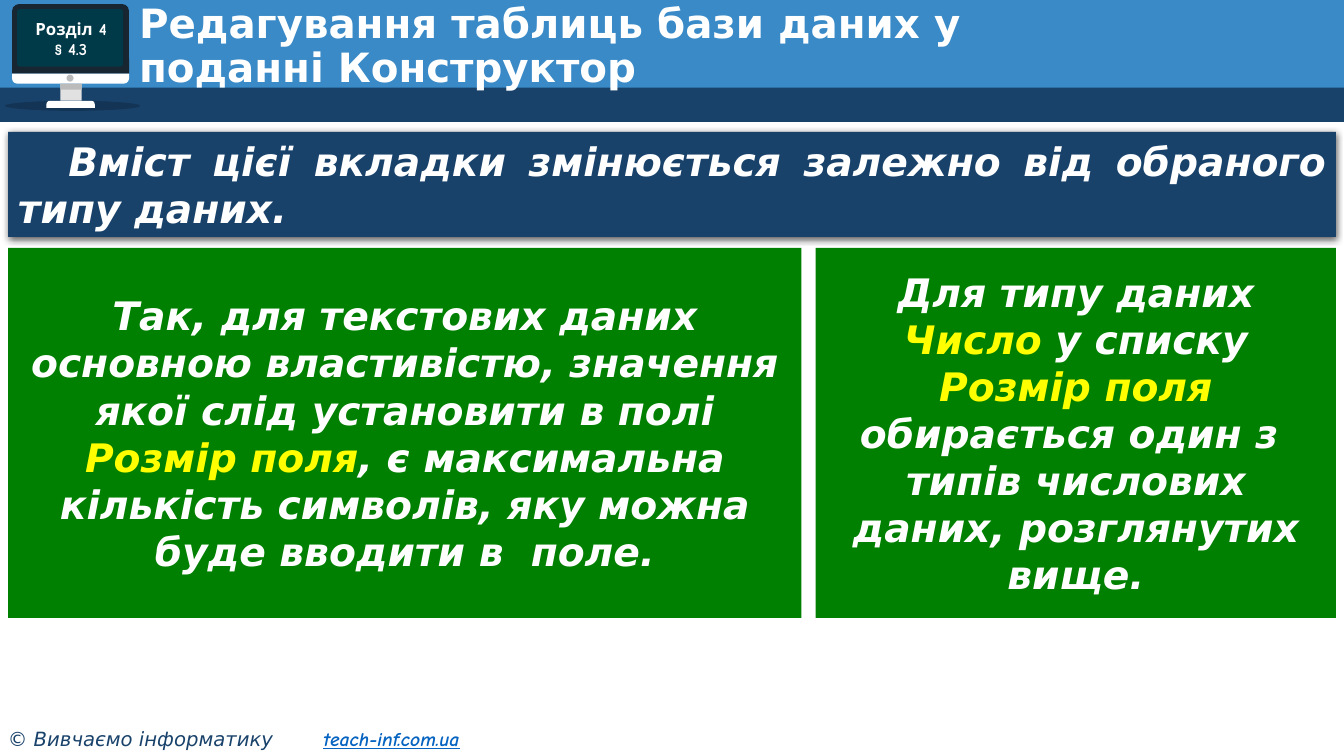
from lxml import etree
from pptx import Presentation
from pptx.dml.color import RGBColor
from pptx.enum.shapes import MSO_SHAPE
from pptx.enum.text import MSO_ANCHOR, MSO_AUTO_SIZE, PP_ALIGN
from pptx.oxml.ns import qn
from pptx.util import Inches, Pt

RECT, OVAL = MSO_SHAPE.RECTANGLE, MSO_SHAPE.OVAL
ROUNDED, ROUND_TOP = MSO_SHAPE.ROUNDED_RECTANGLE, MSO_SHAPE.ROUND_2_SAME_RECTANGLE
LEFT, CENTER, JUSTIFY = PP_ALIGN.LEFT, PP_ALIGN.CENTER, PP_ALIGN.JUSTIFY
TOP, MIDDLE = MSO_ANCHOR.TOP, MSO_ANCHOR.MIDDLE
NO_AUTOFIT = MSO_AUTO_SIZE.NONE

SANS, COMIC = "DejaVu Sans", "Comic Neue"
COLORS = {
    "sky": "398AC7", "navy": "19426B", "green": "008000", "yellow": "FFFF00",
    "white": "FFFFFF", "black": "000000", "link": "0563C1", "case": "182632",
    "screen": "003948", "stand": "E1E1E1", "grey": "BBBBBB",
}
WIDTH, HEIGHT = 13.33, 7.5
MARGIN = 0.08


def add_block(slide, kind, box, color, adjustments=()):
    block = slide.shapes.add_shape(kind, *map(Inches, box))
    block.shadow.inherit = False
    block.fill.solid()
    block.fill.fore_color.rgb = RGBColor.from_string(COLORS[color])
    block.line.fill.background()
    for index, value in enumerate(adjustments):
        block.adjustments[index] = value
    return block


def write(shape, paragraphs, *, size, color="white", font=SANS, bold=False, italic=False,
          align=LEFT, anchor=TOP, indent=0, tab=0, spacing=None):
    frame = shape.text_frame
    frame.word_wrap = True
    frame.auto_size = NO_AUTOFIT
    frame.vertical_anchor = anchor
    for index, pieces in enumerate(paragraphs):
        paragraph = frame.add_paragraph() if index else frame.paragraphs[0]
        paragraph.alignment = align
        paragraph.line_spacing = spacing
        properties = paragraph._p.get_or_add_pPr()
        if indent:
            properties.set("indent", str(Inches(indent)))
        if tab:
            stops = etree.SubElement(properties, qn("a:tabLst"))
            etree.SubElement(stops, qn("a:tab"), pos=str(Inches(tab)), algn="l")
        for text, changes in pieces:
            style = {"color": color, "font": font, "bold": bold, "italic": italic,
                     "underline": None, **changes}
            for number, line in enumerate(text.split("\n")):
                if number:
                    paragraph.add_line_break()
                run = paragraph.add_run()
                run.text = line
                run.font.size = Pt(size)
                run.font.name = style["font"]
                run.font.bold = style["bold"]
                run.font.italic = style["italic"]
                run.font.underline = style["underline"]
                run.font.color.rgb = RGBColor.from_string(COLORS[style["color"]])


def set_alpha(color_element, percent):
    etree.SubElement(color_element, qn("a:alpha"), val=str(percent * 1000))


def add_drop_shadow(block):
    effects = block._element.spPr.find(qn("a:effectLst"))
    shadow = etree.SubElement(effects, qn("a:outerShdw"), blurRad=str(Pt(4.5)),
                              dist=str(Pt(1.5)), dir="5400000", algn="ctr", rotWithShape="0")
    set_alpha(etree.SubElement(shadow, qn("a:srgbClr"), val=COLORS["black"]), 63)


def add_monitor(slide, left, top):
    def part(kind, x, y, width, height, color, adjustments=()):
        return add_block(slide, kind, (left + x, top + y, width, height), color, adjustments)

    floor = part(OVAL, 0, 0.96, 1.34, 0.1, "black")
    set_alpha(floor._element.spPr.find(qn("a:solidFill"))[0], 20)
    part(ROUND_TOP, 0.07, 0, 1.16, 0.69, "case", (0.1, 0))
    part(ROUND_TOP, 0.07, 0.69, 1.16, 0.1, "white", (0, 0.5))
    part(RECT, 0.55, 0.79, 0.21, 0.17, "stand")
    part(RECT, 0.55, 0.79, 0.21, 0.06, "grey")
    part(ROUND_TOP, 0.41, 0.96, 0.48, 0.07, "white", (0.5, 0))
    part(OVAL, 0.61, 0.7, 0.07, 0.07, "grey")
    part(ROUNDED, 0.12, 0.05, 1.05, 0.57, "screen", (0.04,))
    section = slide.shapes.add_textbox(*map(Inches, (left + 0.08, top + 0.05, 1.15, 0.59)))
    write(section, [[("Розділ 4", {})], [("§ 4.3", {})]], size=12, font=COMIC, bold=True,
          align=CENTER, anchor=MIDDLE)


def add_header(slide, left, top, width):
    add_block(slide, RECT, (left, top, width, 0.91), "sky")
    add_block(slide, RECT, (left, top + 0.87, width, 0.34), "navy")
    add_monitor(slide, left + 0.05, top + 0.04)
    title = slide.shapes.title
    title.left, title.top, title.width, title.height = map(
        Inches, (left + 1.28, top + 0.18, 11.72, 0.58))
    write(title, [[("Редагування таблиць бази даних у\nподанні Конструктор", {})]],
          size=28.8, bold=True, anchor=MIDDLE, spacing=0.9)
    slide.shapes._spTree.append(title._element)


def add_intro(slide, box):
    intro = add_block(slide, RECT, box, "navy")
    add_drop_shadow(intro)
    write(intro, [[("Вміст цієї вкладки змінюється залежно від обраного типу даних.", {})]],
          size=28, bold=True, italic=True, align=JUSTIFY, indent=0.5)


def add_card(slide, box, pieces):
    card = add_block(slide, RECT, box, "green")
    write(card, [pieces], size=28, bold=True, italic=True, align=CENTER, anchor=MIDDLE)


def add_footer(slide, box):
    footer = slide.shapes.add_textbox(*map(Inches, box))
    site = {"font": COMIC, "color": "link", "bold": True, "underline": True}
    write(footer, [[("© Вивчаємо інформатику\t", {}), ("teach-inf.com.ua", site)]],
          size=14, color="navy", italic=True, tab=3.13)


def main():
    presentation = Presentation()
    presentation.slide_width, presentation.slide_height = Inches(WIDTH), Inches(HEIGHT)
    slide = presentation.slides.add_slide(presentation.slide_layouts[5])
    key = {"color": "yellow"}
    content_width = WIDTH - 2 * MARGIN
    text_width, gap = 7.87, 0.14
    number_left = MARGIN + text_width + gap

    add_header(slide, 0, 0, WIDTH)
    add_footer(slide, (-0.02, 7.16, 5.23, 0.34))
    add_intro(slide, (MARGIN, 1.31, content_width, 1.04))
    add_card(slide, (MARGIN, 2.46, text_width, 3.67), [
        ("Так, для текстових даних основною властивістю, значення якої слід "
         "установити в полі ", {}),
        ("Розмір поля", key),
        (", є максимальна кількість символів, яку можна буде вводити в  поле.", {}),
    ])
    add_card(slide, (number_left, 2.46, content_width - text_width - gap, 3.67), [
        ("Для типу даних ", {}),
        ("Число", key),
        (" у списку ", {}),
        ("Розмір поля ", key),
        ("обирається один з  типів числових даних, розглянутих вище.", {}),
    ])
    presentation.save("out.pptx")


if __name__ == "__main__":
    main()
